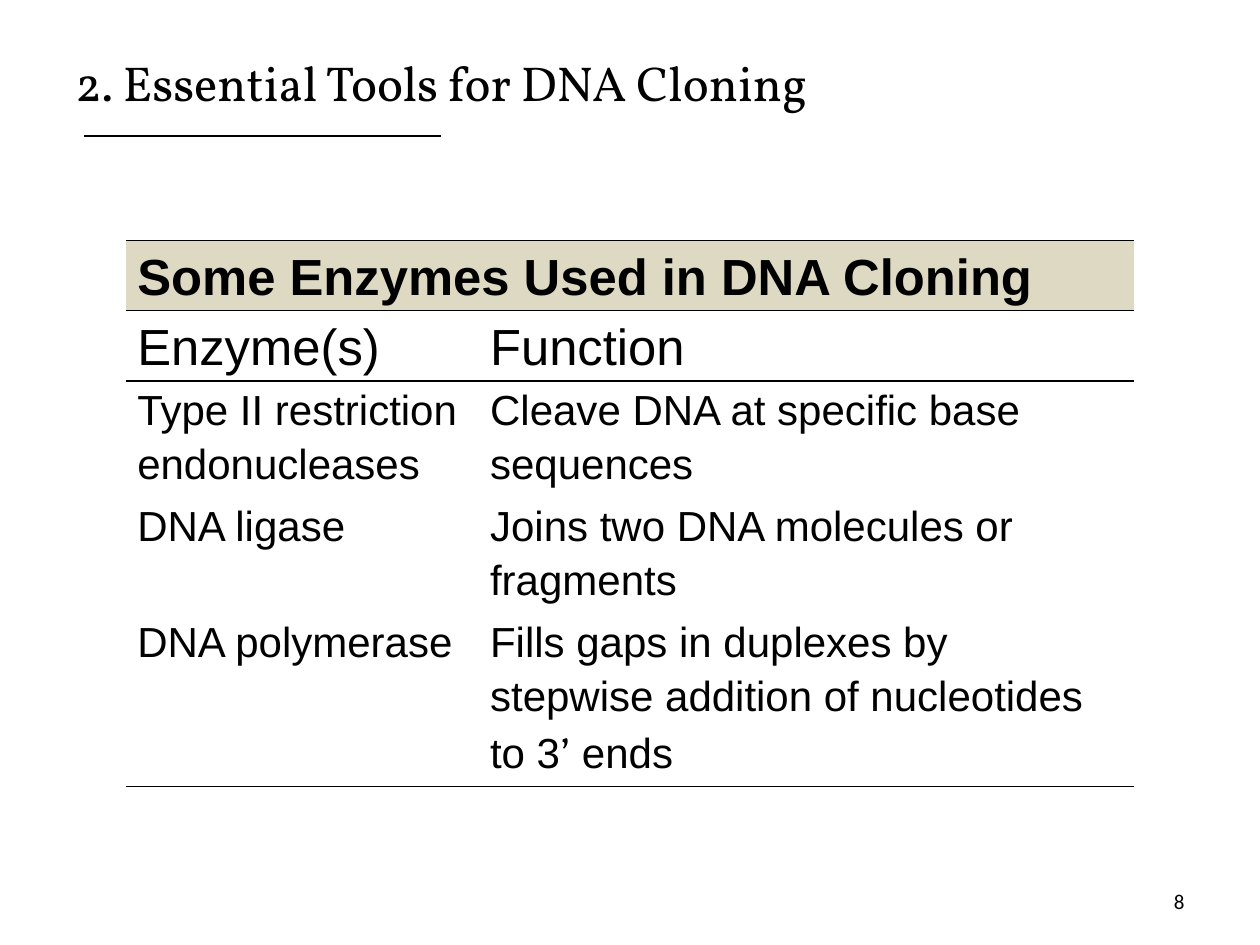
from dataclasses import dataclass

from lxml.etree import SubElement
from pptx import Presentation
from pptx.dml.color import RGBColor
from pptx.enum.shapes import MSO_CONNECTOR
from pptx.enum.text import MSO_ANCHOR, PP_ALIGN
from pptx.oxml.ns import qn
from pptx.util import Inches, Pt


@dataclass(frozen=True)
class Theme:
    ink: str = "000000"
    band: str = "DDD9C3"
    serif: str = "Vollkorn"
    sans: str = "Arial"
    small: str = "Calibri"
    title: int = 28
    head: int = 29
    body: int = 24
    note: int = 12


class Deck:
    def __init__(self, theme):
        self.theme = theme
        self.show = Presentation()
        self.show.slide_width = Inches(10)
        self.show.slide_height = Inches(7.5)
        self.slide = self.show.slides.add_slide(self.show.slide_layouts[6])

    def style(self, font, face, size, bold=False):
        font.name, font.size, font.bold = face, Pt(size), bold
        font.color.rgb = RGBColor.from_string(self.theme.ink)

    def text(self, words, box, face, size, align=PP_ALIGN.LEFT):
        frame = self.slide.shapes.add_textbox(*map(Inches, box)).text_frame
        frame.word_wrap = True
        frame.vertical_anchor = MSO_ANCHOR.MIDDLE
        para = frame.paragraphs[0]
        para.text, para.alignment = words, align
        self.style(para.font, face, size)

    def line(self, left, right, top, width):
        ends = map(Inches, (left, top, right, top))
        rule = self.slide.shapes.add_connector(MSO_CONNECTOR.STRAIGHT, *ends)
        rule.line.color.rgb = RGBColor.from_string(self.theme.ink)
        rule.line.width = Pt(width)
        SubElement(rule._element.spPr, qn("a:effectLst"))

    def border(self, cell, sides):
        props = cell._tc.get_or_add_tcPr()
        for side in "LRTB":
            edge = SubElement(props, qn(f"a:ln{side}"), w=str(Pt(1)))
            if side in sides:
                fill = SubElement(edge, qn("a:solidFill"))
                SubElement(fill, qn("a:srgbClr"), val=self.theme.ink)
            else:
                SubElement(edge, qn("a:noFill"))

    def cell(self, cell, runs, size, bold, sides, fill):
        cell.margin_left = cell.margin_right = Inches(0.09)
        cell.margin_top = cell.margin_bottom = 0
        self.border(cell, sides)
        if fill:
            cell.fill.solid()
            cell.fill.fore_color.rgb = RGBColor.from_string(fill)
        else:
            cell.fill.background()
        para = cell.text_frame.paragraphs[0]
        para.line_spacing = 1.15
        self.style(para.font, self.theme.sans, size, bold)
        for words, face in runs:
            run = para.add_run()
            run.text = words
            self.style(run.font, face, size, bold)

    def table(self, rows, box, widths, heights):
        look = self.theme
        grid = self.slide.shapes.add_table(
            len(rows), len(widths), *map(Inches, box)).table
        for col, width in zip(grid.columns, widths):
            col.width = Inches(width)
        last = len(rows) - 1
        for num, (row, height) in enumerate(zip(rows, heights)):
            grid.rows[num].height = Inches(height)
            top = num == 0
            size = look.head if num < 2 else look.body
            sides = ("T" if num < 3 else "") + ("B" if num < 2 or num == last else "")
            for col, item in enumerate(row):
                runs = [(item, look.sans)] if isinstance(item, str) else item
                self.cell(grid.cell(num, col), runs, size, top, sides,
                          look.band if top else None)
        grid.cell(0, 0).merge(grid.cell(0, len(widths) - 1))


def main():
    look = Theme()
    deck = Deck(look)

    # Title and rule
    deck.text("2. Essential Tools for DNA Cloning", (0.5, 0.3, 9, 0.7),
              look.serif, look.title)
    deck.line(0.67, 3.5, 1.08, 1.5)

    # Page number
    deck.text("8", (7.17, 6.95, 2.33, 0.4), look.small, look.note, PP_ALIGN.RIGHT)

    # Enzyme table
    ends = [
        ("Fills gaps in duplexes by stepwise addition of nucleotides to 3", look.sans),
        ("’", look.serif),
        (" ends", look.sans),
    ]
    rows = [
        ("Some Enzymes Used in DNA Cloning", []),
        ("Enzyme(s)", "Function"),
        ("Type II restriction endonucleases", "Cleave DNA at specific base sequences"),
        ("DNA ligase", "Joins two DNA molecules or fragments"),
        ("DNA polymerase", ends),
    ]
    deck.table(rows, (1, 1.91, 8, 4.32), (2.8, 5.2), (0.55, 0.55, 0.92, 0.92, 1.38))

    deck.show.save("out.pptx")


if __name__ == "__main__":
    main()
